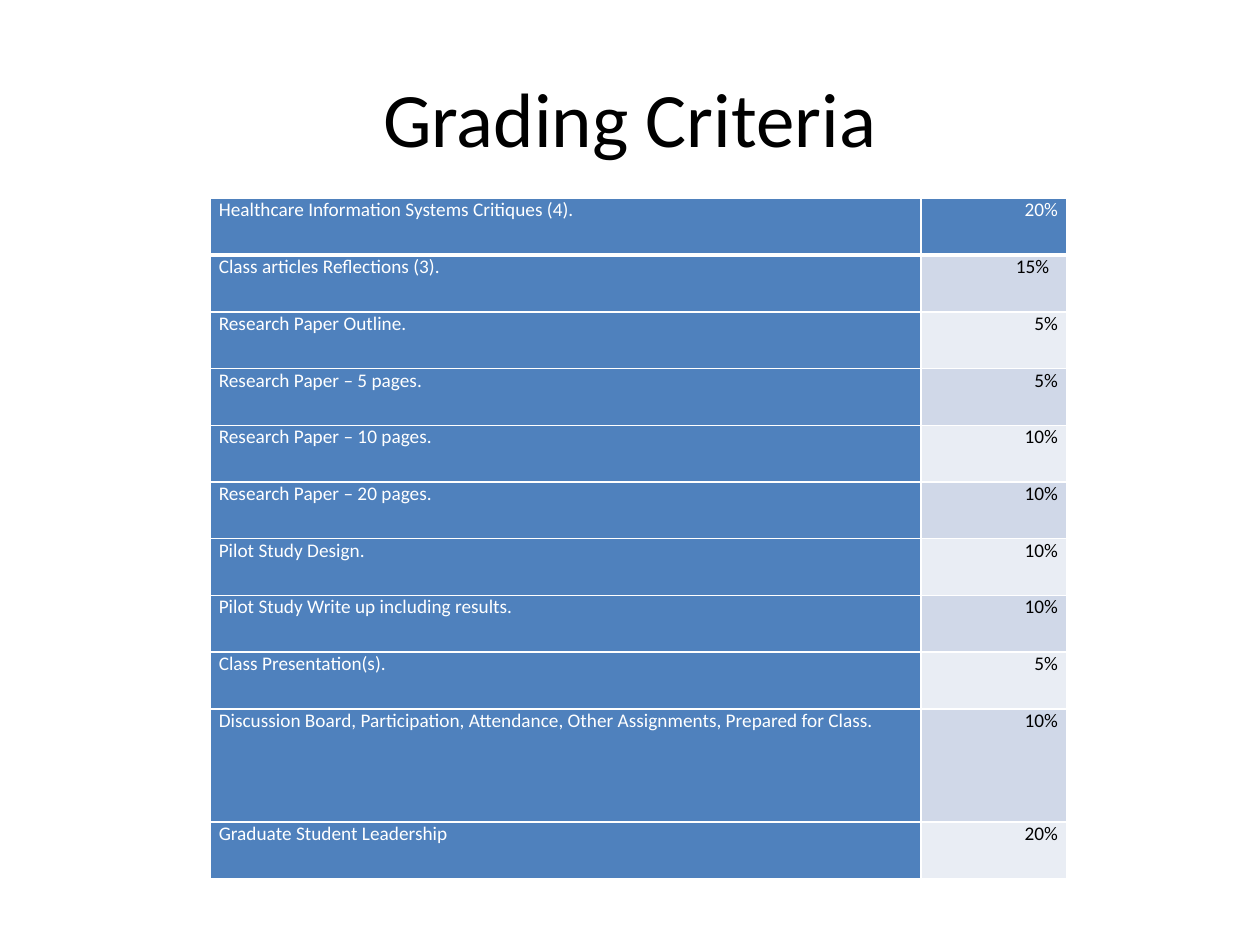
from dataclasses import dataclass

from lxml import etree
from pptx import Presentation
from pptx.dml.color import RGBColor
from pptx.enum.text import MSO_ANCHOR, PP_ALIGN
from pptx.util import Inches, Pt

LEFT, CENTER, RIGHT = PP_ALIGN.LEFT, PP_ALIGN.CENTER, PP_ALIGN.RIGHT
TOP, MIDDLE = MSO_ANCHOR.TOP, MSO_ANCHOR.MIDDLE
NS = "http://schemas.openxmlformats.org/drawingml/2006/main"
WIDE, HIGH = Inches(10), Inches(7.5)


@dataclass(frozen=True)
class Theme:
    font: str = "Calibri"
    head: int = 44
    body: int = 11
    ink: str = "000000"
    pale: str = "FFFFFF"
    blue: str = "4F81BD"
    bands: tuple = ("E9EDF4", "D0D8E8")
    rule: int = 1
    thick: int = 3
    inset: float = 0.07


THEME = Theme()

# Task, weight, height in row units
GRADES = [
    ("Healthcare Information Systems Critiques (4).", "20%", 1),
    ("Class articles Reflections (3).", "15%", 1),
    ("Research Paper Outline.", "5%", 1),
    ("Research Paper – 5 pages.", "5%", 1),
    ("Research Paper – 10 pages.", "10%", 1),
    ("Research Paper – 20 pages.", "10%", 1),
    ("Pilot Study Design.", "10%", 1),
    ("Pilot Study Write up including results.", "10%", 1),
    ("Class Presentation(s).", "5%", 1),
    ("Discussion Board, Participation, Attendance, Other Assignments, "
     "Prepared for Class.", "10%", 2),
    ("Graduate Student Leadership", "20%", 1),
]
INDENTED = 1  # row whose weight sits one inset further in


def share(x, y, w, h):
    """Turn shares of the slide into a box of lengths."""
    return int(x * WIDE), int(y * HIGH), int(w * WIDE), int(h * HIGH)


def apply(item, values):
    for name, value in values.items():
        setattr(item, name, value)


def write(frame, text, size, color, align):
    frame.text = text
    para = frame.paragraphs[0]
    para.alignment = align
    font = para.runs[0].font
    apply(font, {"name": THEME.font, "size": Pt(size)})
    font.color.rgb = RGBColor.from_string(color)


def border(cell, side, width):
    line = etree.SubElement(cell._tc.get_or_add_tcPr(), f"{{{NS}}}ln{side}",
                            w=str(Pt(width)))
    fill = etree.SubElement(line, f"{{{NS}}}solidFill")
    etree.SubElement(fill, f"{{{NS}}}srgbClr", val=THEME.pale)


def title(slide, box, text):
    shape = slide.shapes.title
    apply(shape, dict(zip(("left", "top", "width", "height"), box)))
    write(shape.text_frame, text, THEME.head, THEME.ink, CENTER)
    shape.text_frame.vertical_anchor = MIDDLE


def style(cell, row, col):
    """Set margins, borders and fill; the first row and column are blue."""
    inset = Inches(THEME.inset)
    extra = 2 if (row, col) == (INDENTED, 1) else 1
    apply(cell, {"margin_left": inset, "margin_right": inset * extra,
                 "margin_top": 0, "margin_bottom": 0,
                 "vertical_anchor": TOP})
    for side in "LRTB":
        heavy = row == 0 and side == "B"
        border(cell, side, THEME.thick if heavy else THEME.rule)
    solid = row == 0 or col == 0
    cell.fill.solid()
    cell.fill.fore_color.rgb = RGBColor.from_string(
        THEME.blue if solid else THEME.bands[row % 2])
    return THEME.pale if solid else THEME.ink


def grades(slide, box, rows):
    left, top, width, height = box
    table = slide.shapes.add_table(len(rows), 2, *box).table
    for col, part in zip(table.columns, (0.83, 0.17)):
        col.width = int(width * part)
    unit = height // sum(units for *_, units in rows)
    for r, (task, weight, units) in enumerate(rows):
        table.rows[r].height = unit * units
        for c, (text, align) in enumerate(((task, LEFT), (weight, RIGHT))):
            cell = table.cell(r, c)
            color = style(cell, r, c)
            write(cell.text_frame, text, THEME.body, color, align)


def main():
    deck = Presentation()
    apply(deck, {"slide_width": WIDE, "slide_height": HIGH})
    slide = deck.slides.add_slide(deck.slide_layouts.get_by_name("Title Only"))
    title(slide, share(0.05, 0.04, 0.9, 1 / 6), "Grading Criteria")
    grades(slide, share(1 / 6, 0.21, 0.68, 0.72), GRADES)
    deck.save("out.pptx")


if __name__ == "__main__":
    main()
